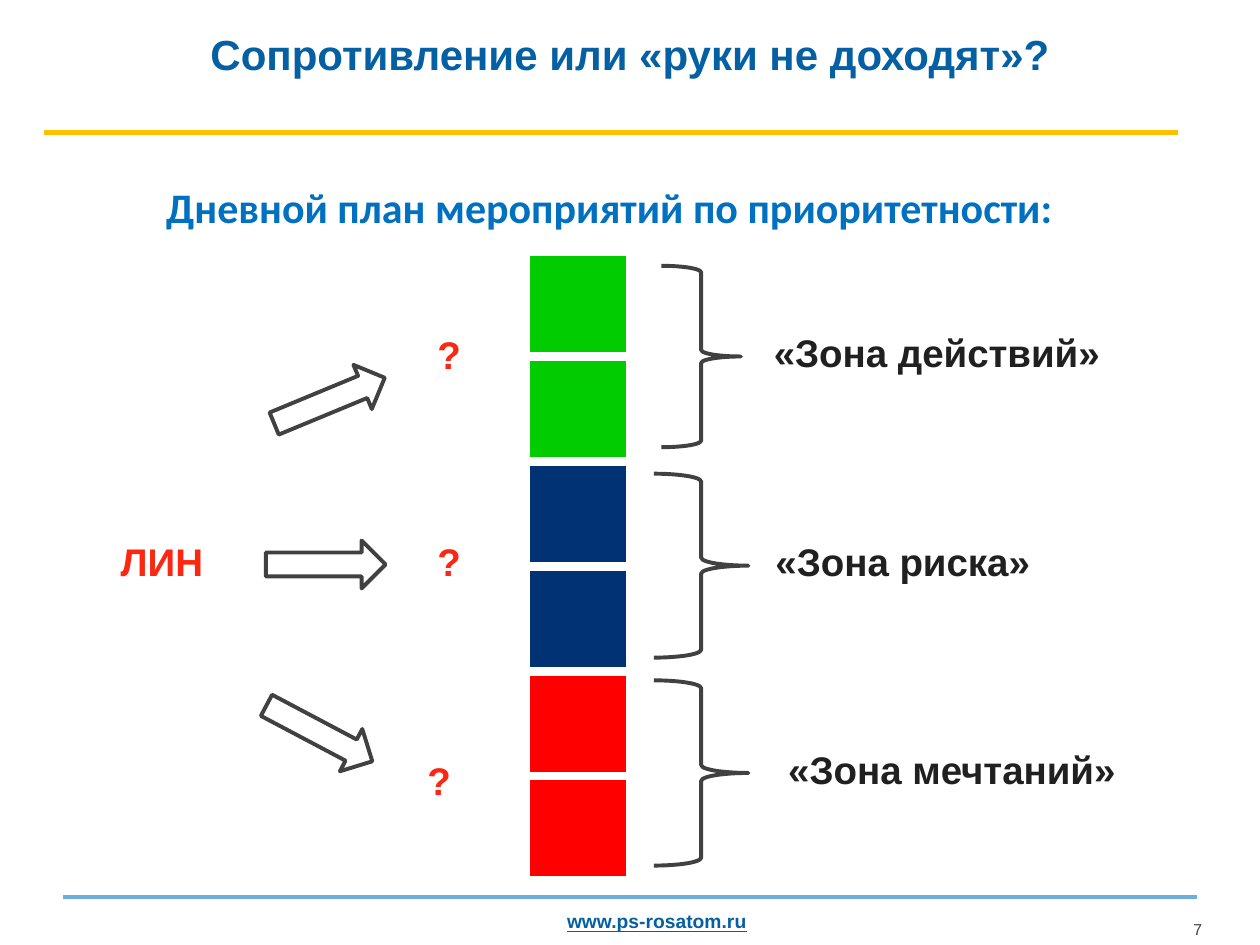
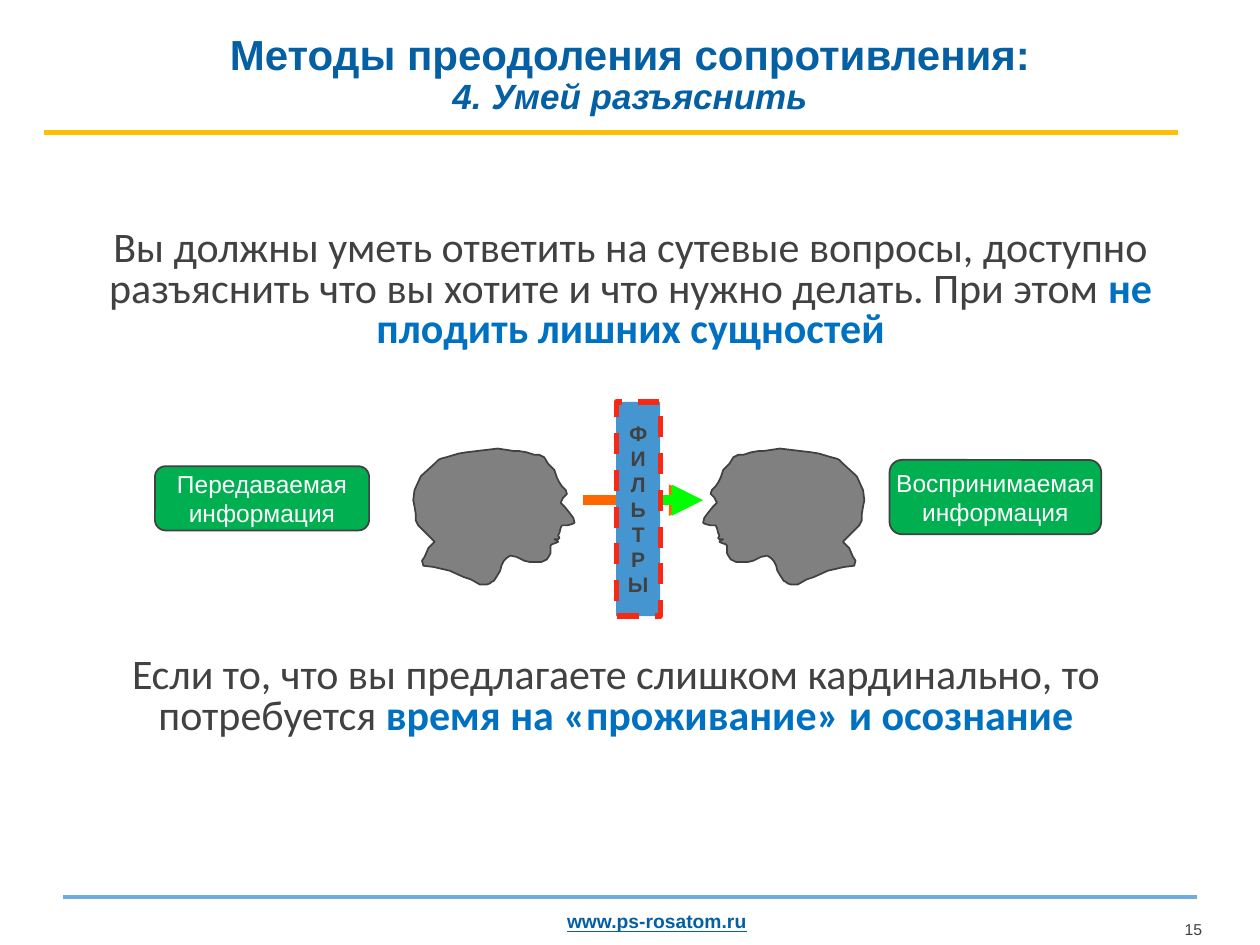
from collections import namedtuple
from dataclasses import dataclass

from lxml import etree
from pptx import Presentation
from pptx.dml.color import RGBColor
from pptx.enum.dml import MSO_LINE
from pptx.enum.shapes import MSO_CONNECTOR, MSO_SHAPE
from pptx.enum.text import MSO_ANCHOR, PP_ALIGN
from pptx.oxml.ns import qn
from pptx.util import Inches, Pt

STRAIGHT = MSO_CONNECTOR.STRAIGHT
RECTANGLE = MSO_SHAPE.RECTANGLE
ROUNDED = MSO_SHAPE.ROUNDED_RECTANGLE
BRACE = MSO_SHAPE.RIGHT_BRACE
ARROW = MSO_SHAPE.RIGHT_ARROW
DASH = MSO_LINE.DASH
MIDDLE = MSO_ANCHOR.MIDDLE
LEFT, CENTER, RIGHT = PP_ALIGN.LEFT, PP_ALIGN.CENTER, PP_ALIGN.RIGHT

Box = namedtuple("Box", "left top width height")


@dataclass(frozen=True)
class Theme:
    title: str = "045FA3"
    accent: str = "0070C0"
    text: str = "414142"
    label: str = "202021"
    alert: str = "FA2812"
    white: str = "FFFFFF"
    title_rule: str = "FFC000"
    footer_rule: str = "6CAEDF"
    action: str = "00CC00"
    risk: str = "003274"
    dream: str = "FF0000"
    head: str = "808080"
    caption: str = "00B050"
    filter: str = "4595D1"
    sent: str = "FF6600"
    received: str = "00FF00"
    font: str = "Arial"
    body_font: str = "Calibri"
    title_size: int = 24
    subtitle_size: int = 20
    body_size: int = 24
    label_size: int = 22
    caption_size: int = 14
    filter_size: int = 12
    link_size: int = 11
    number_size: int = 9


THEME = Theme()

# Head profile facing right, in hundredths of an inch
HEAD_WIDTH = 128
HEAD_PROFILE = [
    (58, 108), (53, 108), (46, 104), (40, 102), (29, 97), (16, 94), (8, 93),
    (7, 89), (9, 86), (12, 79), (17, 74), (4, 61), (2, 57), (2, 52), (1, 46),
    (0, 41), (1, 33), (6, 22), (17, 12), (20, 9), (22, 8), (26, 7), (36, 4),
    (42, 3), (67, 0), (80, 2), (84, 2), (90, 3), (96, 5), (100, 5), (104, 7),
    (107, 12), (112, 17), (114, 23), (116, 27), (118, 30), (121, 33),
    (122, 36), (119, 39), (117, 43), (120, 46), (124, 51), (127, 55),
    (128, 59), (126, 60), (122, 61), (118, 61), (117, 63), (116, 67),
    (115, 69), (116, 71), (115, 72), (112, 72), (114, 73), (115, 74),
    (113, 75), (110, 76), (109, 77), (109, 83), (108, 85), (106, 88),
    (102, 90), (92, 90), (88, 89), (82, 86), (77, 85), (74, 87), (72, 89),
    (70, 93), (69, 97), (66, 102), (64, 105), (62, 106), (61, 107),
]


def color(value):
    return RGBColor.from_string(value)


def inches(box):
    return [Inches(length) for length in box]


def format_font(font, size, tint, name=THEME.font, bold=False, italic=None):
    font.name, font.size = name, Pt(size)
    font.bold, font.italic = bold, italic
    font.color.rgb = color(tint)


def add_text(slide, box, text, size, tint, align=CENTER, spacing=None,
             inset=None, name=THEME.font, bold=False):
    """Add a one-paragraph text box and return the paragraph."""
    frame = slide.shapes.add_textbox(*inches(box)).text_frame
    frame.word_wrap = True
    if inset is not None:
        frame.margin_left = frame.margin_right = Inches(inset)
        frame.margin_top = frame.margin_bottom = Inches(inset)
    frame.text = text
    paragraph = frame.paragraphs[0]
    paragraph.alignment = align
    paragraph.line_spacing = spacing
    format_font(paragraph.runs[0].font, size, tint, name, bold)
    return paragraph


def style(shape, fill, line, width):
    shape.shadow.inherit = False
    shape.fill.solid()
    shape.fill.fore_color.rgb = color(fill)
    shape.line.color.rgb = color(line)
    shape.line.width = Pt(width)
    return shape


def add_shape(slide, kind, box, fill, line, width):
    return style(slide.shapes.add_shape(kind, *inches(box)), fill, line, width)


def add_line(slide, left, right, y, tint, width, arrow=False):
    line = slide.shapes.add_connector(
        STRAIGHT, Inches(left), Inches(y), Inches(right), Inches(y))
    line.line.color.rgb = color(tint)
    line.line.width = Pt(width)
    properties = line._element.spPr
    if arrow:
        etree.SubElement(properties.find(qn("a:ln")), qn("a:tailEnd"),
                         type="triangle")
    etree.SubElement(properties, qn("a:effectLst"))


def add_label(slide, box, text, tint):
    add_text(slide, box, text, THEME.label_size, tint, spacing=0.8, bold=True)


def add_body(slide, box, plain, strong):
    """Body paragraph that ends in a highlighted phrase."""
    paragraph = add_text(slide, box, plain, THEME.body_size, THEME.text,
                         spacing=0.8, name=THEME.body_font)
    run = paragraph.add_run()
    run.text = strong
    format_font(run.font, THEME.body_size, THEME.accent, THEME.body_font, True)


def add_frame(presentation, number, title, subtitle=None):
    """Blank slide with the shared title, rules and footer."""
    slide = presentation.slides.add_slide(presentation.slide_layouts[6])
    # Footer
    link = add_text(slide, Box(4.5, 7.22, 1.48, 0.19), "www.ps-rosatom.ru",
                    THEME.link_size, THEME.title, LEFT, inset=0, bold=True)
    link.runs[0].font.underline = True
    add_line(slide, 0.5, 9.5, 7.12, THEME.footer_rule, 2.25)
    add_text(slide, Box(9.35, 7.3, 0.19, 0.15), str(number),
             THEME.number_size, THEME.text, RIGHT, inset=0)
    # Title
    add_line(slide, 0.35, 9.35, 1.05, THEME.title_rule, 2.75)
    heading = add_text(slide, Box(0.71, 0.22, 8.58, 1.05), title,
                       THEME.title_size, THEME.title, spacing=0.9, bold=True)
    if subtitle:
        heading.add_line_break()
        run = heading.add_run()
        run.text = subtitle
        format_font(run.font, THEME.subtitle_size, THEME.title,
                    bold=True, italic=True)
    return slide


def add_priority_stack(slide, box, tints):
    """Column of squares, equally spaced over the height of the box."""
    pitch = (box.height - box.width) / (len(tints) - 1)
    for index, tint in enumerate(tints):
        square = Box(box.left, box.top + index * pitch, box.width, box.width)
        add_shape(slide, RECTANGLE, square, tint, THEME.white, 2)


def add_zone(slide, box, name, label_offset, label_width):
    """Brace filling the box, with the zone name to its right."""
    add_shape(slide, BRACE, box, THEME.white, THEME.text, 2.25)
    dx, dy = label_offset
    label = Box(box.left + box.width + dx, box.top + dy, label_width, 0.4)
    add_label(slide, label, name, THEME.label)


def add_lean_question(slide, arrow_box, angle, question_offset):
    """Arrow in the box and the question mark it points to."""
    arrow = add_shape(slide, ARROW, arrow_box, THEME.white, THEME.text, 2.25)
    arrow.rotation = angle
    dx, dy = question_offset
    question = Box(arrow_box.left + dx, arrow_box.top + dy, 0.87, 0.4)
    add_label(slide, question, "?", THEME.alert)


def add_head(slide, box, faces_left=False):
    points = [(HEAD_WIDTH - x if faces_left else x, y)
              for x, y in HEAD_PROFILE]
    builder = slide.shapes.build_freeform(*points[0], scale=Inches(0.01))
    builder.add_line_segments(points[1:], close=True)
    head = builder.convert_to_shape(Inches(box.left), Inches(box.top))
    style(head, THEME.head, THEME.text, 1)


def add_caption(slide, box, text, side_inset):
    shape = add_shape(slide, ROUNDED, box, THEME.caption, THEME.text, 1)
    frame = shape.text_frame
    frame.word_wrap = True
    frame.vertical_anchor = MIDDLE
    frame.margin_left = frame.margin_right = Inches(side_inset)
    frame.text = text
    paragraph = frame.paragraphs[0]
    paragraph.alignment = CENTER
    format_font(paragraph.runs[0].font, THEME.caption_size, THEME.white)


def add_filter(slide, box, word):
    """Dashed barrier with one letter of the word on each line."""
    barrier = add_shape(slide, RECTANGLE, box, THEME.filter, THEME.alert, 3)
    barrier.line.dash_style = DASH
    frame = barrier.text_frame
    frame.word_wrap = False
    frame.vertical_anchor = MIDDLE
    frame.text = "\n".join(word)
    for paragraph in frame.paragraphs:
        paragraph.alignment = CENTER
        format_font(paragraph.runs[0].font, THEME.filter_size, THEME.text,
                    bold=True)


def add_communication(slide, box):
    """Two heads exchanging information through a filter."""
    left, top = box.left, box.top
    add_head(slide, Box(left + 2.05, top + 0.37, 1.28, 1.08))
    add_head(slide, Box(left + 4.35, top + 0.37, 1.28, 1.08), faces_left=True)
    add_caption(slide, Box(left + 5.83, top + 0.46, 1.68, 0.59),
                "Воспринимаемая информация", 0)
    add_caption(slide, Box(left, top + 0.51, 1.7, 0.51),
                "Передаваемая информация", 0.1)
    # Message before and after the filter
    middle = top + 0.78
    add_line(slide, left + 3.4, left + 4.33, middle, THEME.sent, 6, True)
    add_line(slide, left + 3.4, left + 3.56, middle, THEME.sent, 6)
    add_line(slide, left + 3.98, left + 4.35, middle, THEME.received, 6, True)
    add_filter(slide, Box(left + 3.66, top, 0.35, box.height), "ФИЛЬТРЫ")


def build_priorities(presentation):
    slide = add_frame(presentation, 7, "Сопротивление или «руки не доходят»?")
    add_text(slide, Box(1.22, 1.39, 7.31, 0.5),
             "Дневной план мероприятий по приоритетности:", THEME.body_size,
             THEME.accent, LEFT, name=THEME.body_font, bold=True)
    # Zones
    zone_tints = (THEME.action, THEME.risk, THEME.dream)
    add_priority_stack(slide, Box(4.19, 2.02, 0.79, 4.95),
                       [tint for tint in zone_tints for _ in range(2)])
    add_zone(slide, Box(5.25, 2.11, 0.63, 1.44), "«Зона действий»",
             (0.1, 0.52), 2.91)
    add_zone(slide, Box(5.19, 3.76, 0.75, 1.46), "«Зона риска»",
             (-0.06, 0.53), 2.57)
    add_zone(slide, Box(5.19, 5.4, 0.75, 1.47), "«Зона мечтаний»",
             (0.16, 0.54), 2.91)
    # Where lean belongs
    add_label(slide, Box(0.85, 4.29, 0.87, 0.4), "ЛИН", THEME.alert)
    for left, top, angle, offset in (
            (2.14, 2.99, 337.5, (0.99, -0.34)),
            (2.11, 4.29, 0, (1.02, 0)),
            (2.06, 5.63, 27.9, (0.99, 0.4))):
        add_lean_question(slide, Box(left, top, 0.95, 0.38), angle, offset)


def build_explanation(presentation):
    slide = add_frame(presentation, 15, "Методы преодоления сопротивления:",
                      "4. Умей разъяснить")
    add_communication(slide, Box(1.23, 3.19, 7.51, 1.7))
    add_body(slide, Box(0.3, 1.78, 9.41, 0.88),
             "Вы должны уметь ответить на сутевые вопросы, доступно разъяснить "
             "что вы хотите и что нужно делать. При этом ",
             "не плодить лишних сущностей")
    add_body(slide, Box(0.66, 5.17, 8.46, 0.75),
             "Если то, что вы предлагаете слишком кардинально, то потребуется ",
             "время на «проживание» и осознание")


def main():
    presentation = Presentation()
    presentation.slide_width, presentation.slide_height = Inches(10), Inches(7.5)
    build_priorities(presentation)
    build_explanation(presentation)
    presentation.save("out.pptx")


if __name__ == "__main__":
    main()
